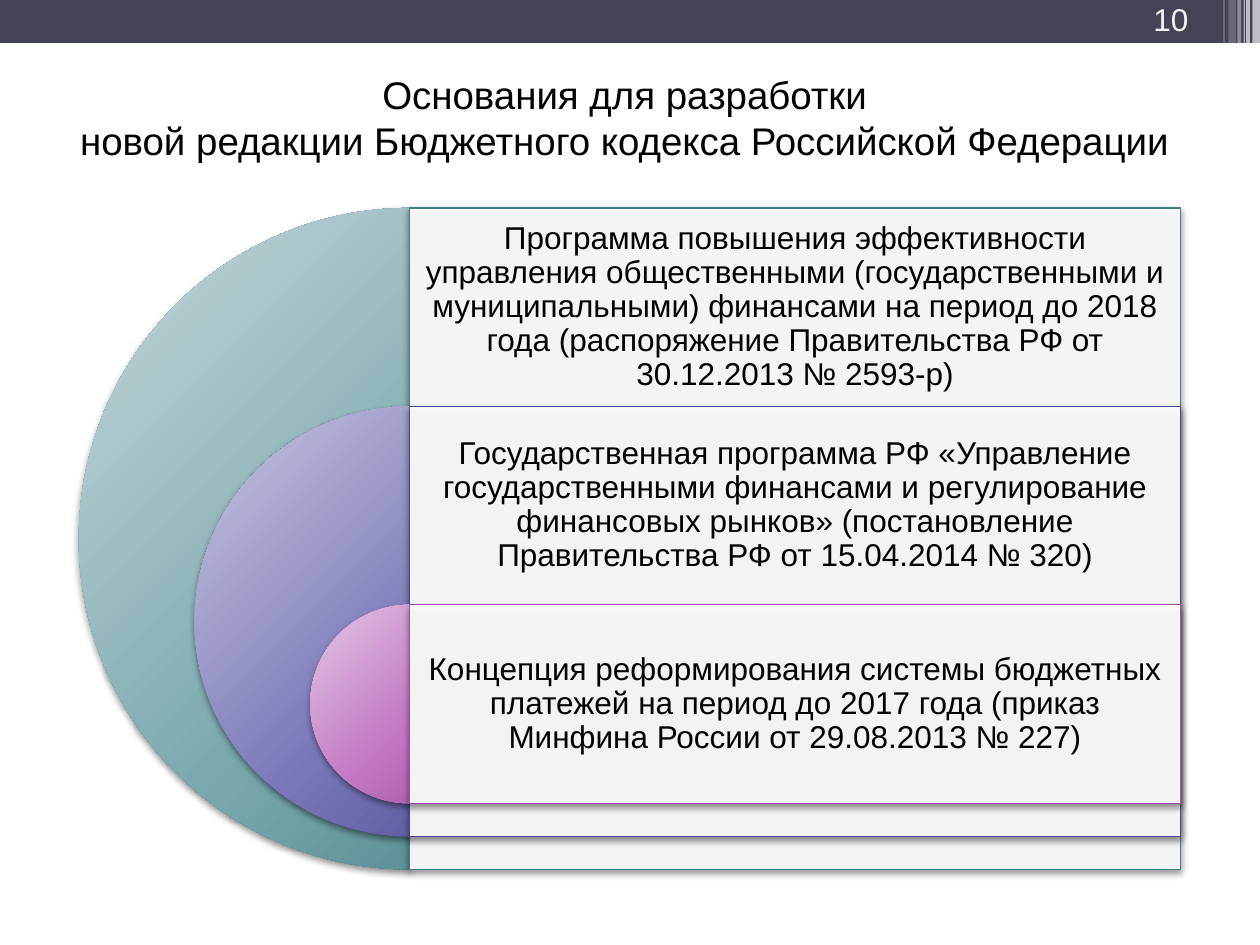
from lxml import etree
from pptx import Presentation
from pptx.dml.color import RGBColor
from pptx.enum.shapes import MSO_SHAPE
from pptx.enum.text import MSO_ANCHOR, MSO_AUTO_SIZE, PP_ALIGN
from pptx.oxml import parse_xml
from pptx.oxml.ns import qn
from pptx.util import Inches, Pt

RECT, PIE = MSO_SHAPE.RECTANGLE, MSO_SHAPE.PIE
CENTER, RIGHT = PP_ALIGN.CENTER, PP_ALIGN.RIGHT
MIDDLE, BOTTOM = MSO_ANCHOR.MIDDLE, MSO_ANCHOR.BOTTOM
DRAWING_NS = "http://schemas.openxmlformats.org/drawingml/2006/main"

# Content
TITLE = ("Основания для разработки \n"
         "новой редакции Бюджетного кодекса Российской Федерации ")
PAGE_NUMBER = "10"
# text, outline colour, gradient from light to dark
GROUNDS = [
    ("Программа повышения эффективности управления общественными "
     "(государственными и муниципальными) финансами на период до 2018 года "
     "(распоряжение Правительства РФ от 30.12.2013 № 2593-р)",
     "438086", ("C7D7DA", "77A7AD", "3E777D")),
    ("Государственная программа РФ «Управление государственными финансами "
     "и регулирование финансовых рынков» (постановление Правительства РФ "
     "от 15.04.2014 № 320)",
     "4A4894", ("C7C7DE", "7977B8", "45438A")),
    ("Концепция реформирования системы бюджетных платежей на период "
     "до 2017 года (приказ Минфина России от 29.08.2013 № 227)",
     "A04DA3", ("E2C6E3", "C277C5", "954898")),
]
# left, width, height, opacity in percent
STRIPES = [
    (9.94, 0.06, 0.68, 65), (9.89, 0.03, 0.68, 65), (9.87, 0.01, 0.68, 60),
    (9.82, 0.03, 0.68, 40), (9.75, 0.06, 0.64, 20), (9.71, 0.01, 0.64, 30),
]

# Diagram geometry
AXIS, TOP, DIAMETER, PANEL_WIDTH = 3.25, 1.65, 5.25, 6.12
STEP = 0.3 * DIAMETER
SHRINK = 0.35 * DIAMETER


def color(hex_code):
    return RGBColor.from_string(hex_code)


def add_shape(slide, kind, box, fill=None, opacity=100, outline=None):
    shape = slide.shapes.add_shape(kind, *map(Inches, box))
    shape.shadow.inherit = False
    if fill:
        shape.fill.solid()
        shape.fill.fore_color.rgb = color(fill)
        if opacity < 100:
            srgb = shape.fill._xPr.find(".//" + qn("a:srgbClr"))
            etree.SubElement(srgb, qn("a:alpha"), val=str(opacity * 1000))
    if outline:
        shape.line.color.rgb = color(outline)
        shape.line.width = Pt(0.75)
    else:
        shape.line.fill.background()
    return shape


def add_shadow(shape):
    effects = shape._element.spPr.find(qn("a:effectLst"))
    effects.append(parse_xml(
        f'<a:outerShdw xmlns:a="{DRAWING_NS}" blurRad="{Pt(4)}" dist="{Pt(2)}" '
        'dir="5400000" rotWithShape="0"><a:srgbClr val="000000">'
        '<a:alpha val="45000"/></a:srgbClr></a:outerShdw>'))


def fill_radial(shape, hex_codes):
    stops = "".join(
        f'<a:gs pos="{pos * 1000}"><a:srgbClr val="{code}"/></a:gs>'
        for pos, code in zip((0, 55, 100), hex_codes))
    shape.fill.background()
    properties = shape._element.spPr
    properties.replace(properties.find(qn("a:noFill")), parse_xml(
        f'<a:gradFill xmlns:a="{DRAWING_NS}" rotWithShape="1">'
        f'<a:gsLst>{stops}</a:gsLst><a:path path="circle">'
        '<a:fillToRect l="-40000" t="-90000" r="140000" b="190000"/>'
        '</a:path></a:gradFill>'))


def set_text(shape, text, size, hex_code="000000", align=CENTER,
             anchor=MIDDLE, spacing=1.0, insets=(0.1, 0.05)):
    frame = shape.text_frame
    frame.text = text
    frame.word_wrap = True
    frame.auto_size = MSO_AUTO_SIZE.NONE
    frame.vertical_anchor = anchor
    frame.margin_left = frame.margin_right = Inches(insets[0])
    frame.margin_top = frame.margin_bottom = Inches(insets[1])
    for paragraph in frame.paragraphs:
        paragraph.alignment = align
        paragraph.line_spacing = spacing
        paragraph.space_before = Pt(0)
        for run in paragraph.runs:
            run.font.name = "Arial"
            run.font.size = Pt(size)
            run.font.color.rgb = color(hex_code)


def add_text(slide, box, text, size, **style):
    set_text(slide.shapes.add_textbox(*map(Inches, box)), text, size, **style)


def add_ground(slide, index, text, outline, gradient):
    diameter = DIAMETER - index * SHRINK
    top = TOP + index * STEP
    half = add_shape(slide, PIE, (AXIS - diameter / 2, top, diameter, diameter))
    half.adjustments[0], half.adjustments[1] = 54, 162  # left half
    fill_radial(half, gradient)
    add_shadow(half)
    panel = add_shape(slide, RECT, (AXIS, top, PANEL_WIDTH, diameter),
                      "FFFFFF", 90, outline)
    add_shadow(panel)
    add_text(slide, (AXIS, top, PANEL_WIDTH, STEP), text, 18,
             spacing=0.9, insets=(0.07, 0.07))


def main():
    deck = Presentation()
    deck.slide_width, deck.slide_height = Inches(10), Inches(7.5)
    slide = deck.slides.add_slide(deck.slide_layouts[5])

    # Header band
    add_shape(slide, RECT, (0, 0, 10, 0.34), "424456")
    for left, width, height, opacity in STRIPES:
        add_shape(slide, RECT, (left, 0, width, height), "FFFFFF", opacity)

    # Title
    title = slide.shapes.title
    title.left, title.top = Inches(0), Inches(0.5)
    title.width, title.height = Inches(10), Inches(0.86)
    set_text(title, TITLE, 22)

    # Nested half circles with panels
    for index, ground in enumerate(GROUNDS):
        add_ground(slide, index, *ground)

    # Page number
    add_text(slide, (8.74, 0.02, 0.79, 0.33), PAGE_NUMBER, 18,
             hex_code="F2F2F2", align=RIGHT, anchor=BOTTOM)

    deck.save("out.pptx")


if __name__ == "__main__":
    main()
